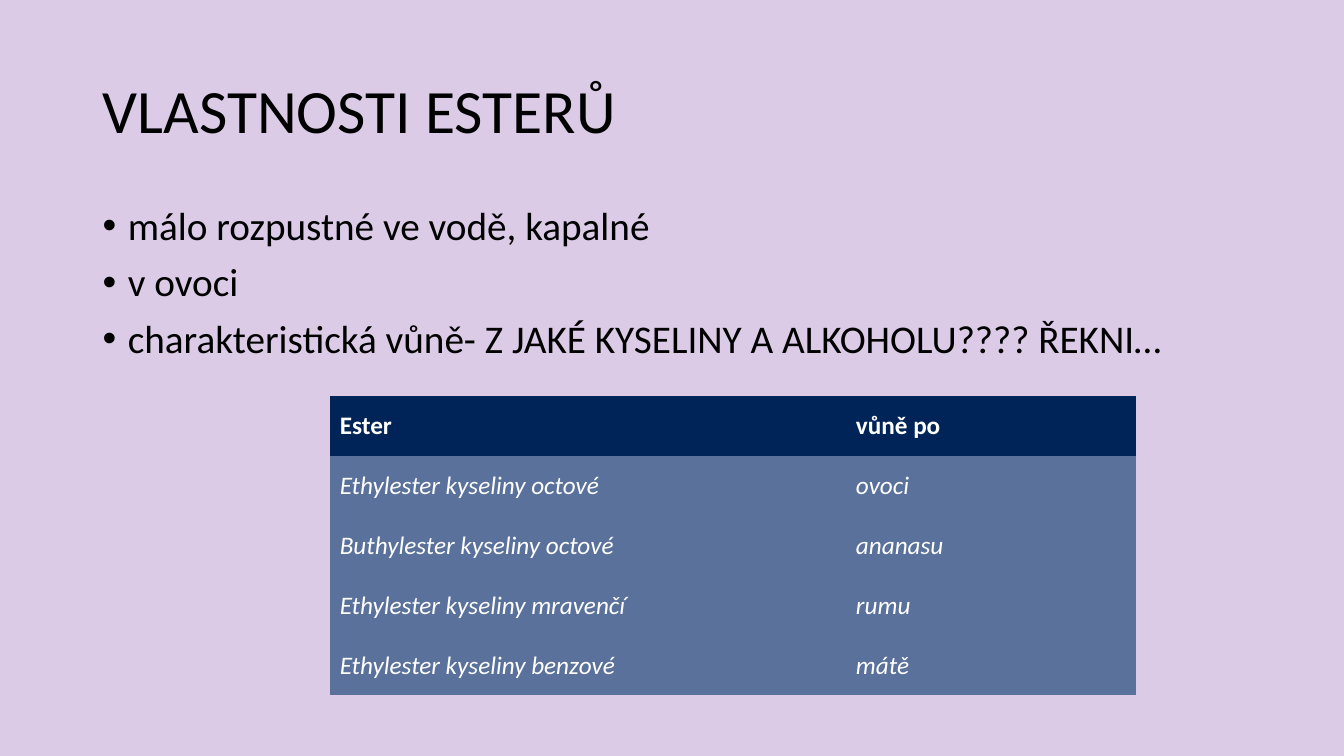
from lxml.etree import SubElement
from pptx import Presentation
from pptx.dml.color import RGBColor
from pptx.enum.text import MSO_ANCHOR, PP_ALIGN
from pptx.oxml.ns import qn
from pptx.util import Emu, Inches, Pt

FONT = "Calibri"
LILAC, NAVY, SLATE = "DBCBE7", "002458", "5A719B"
BLACK, WHITE = "000000", "FFFFFF"

TITLE = "VLASTNOSTI ESTERŮ"
PROPERTIES = [
    "málo rozpustné ve vodě, kapalné",
    "v ovoci",
    "charakteristická vůně- Z JAKÉ KYSELINY A ALKOHOLU???? ŘEKNI…",
]
ESTERS = [
    ("Ester", "vůně po"),
    ("Ethylester kyseliny octové", "ovoci"),
    ("Buthylester kyseliny octové", "ananasu"),
    ("Ethylester kyseliny mravenčí", "rumu"),
    ("Ethylester kyseliny benzové", "mátě"),
]


def paint(fill, color):
    fill.solid()
    fill.fore_color.rgb = RGBColor.from_string(color)


def write(p, text, size, color=BLACK, bold=False, italic=False, spacing=None, before=0):
    p.alignment = PP_ALIGN.LEFT
    p.line_spacing = spacing
    p.space_before = Pt(before)
    r = p.add_run()
    r.text = text
    font = r.font
    font.name, font.size, font.bold, font.italic = FONT, Pt(size), bold, italic
    font.color.rgb = RGBColor.from_string(color)


def add_bullet(p, indent):
    pPr = p._p.get_or_add_pPr()
    pPr.set("marL", str(indent))
    pPr.set("indent", str(-indent))
    SubElement(pPr, qn("a:buFont"), typeface="Arial")
    SubElement(pPr, qn("a:buChar"), char="•")


def add_title(s, box):
    title = s.shapes.title
    title.left, title.top, title.width, title.height = box
    tf = title.text_frame
    tf.vertical_anchor = MSO_ANCHOR.MIDDLE
    write(tf.paragraphs[0], TITLE, 44, spacing=0.9)


def add_properties(s, box):
    tf = s.shapes.add_textbox(*box).text_frame
    tf.word_wrap = True
    for i, text in enumerate(PROPERTIES):
        p = tf.add_paragraph() if i else tf.paragraphs[0]
        write(p, text, 28, spacing=0.9, before=10)
        add_bullet(p, Inches(0.25))


def add_ester_table(s, box):
    width, height = box[2:]
    table = s.shapes.add_table(len(ESTERS), 2, *box).table
    table.horz_banding = False
    for column, share in zip(table.columns, (0.64, 0.36)):
        column.width = Emu(int(width * share))
    for i, (row, texts) in enumerate(zip(table.rows, ESTERS)):
        row.height = Emu(height // len(ESTERS))
        header = i == 0
        for cell, text in zip(row.cells, texts):
            paint(cell.fill, NAVY if header else SLATE)
            cell.vertical_anchor = MSO_ANCHOR.MIDDLE
            write(cell.text_frame.paragraphs[0], text, 18, WHITE,
                  bold=header, italic=not header)
    # The plain "No Style, No Grid" table style leaves out cell borders
    style = table._tbl.tblPr.find(qn("a:tableStyleId"))
    style.text = "{2D5ABB26-0587-4C30-8999-92F81FD0307C}"


def main():
    prs = Presentation()
    prs.slide_width, prs.slide_height = Inches(13.33), Inches(7.5)
    s = prs.slides.add_slide(prs.slide_layouts[5])
    paint(s.background.fill, LILAC)

    margin, content = Inches(0.92), Inches(11.5)
    add_title(s, (margin, Inches(0.4), content, Inches(1.45)))
    add_properties(s, (margin, Inches(2), content, Inches(4.76)))
    add_ester_table(s, (Inches(3.27), Inches(3.93), Inches(8), Inches(2.97)))
    prs.save("out.pptx")


if __name__ == "__main__":
    main()
